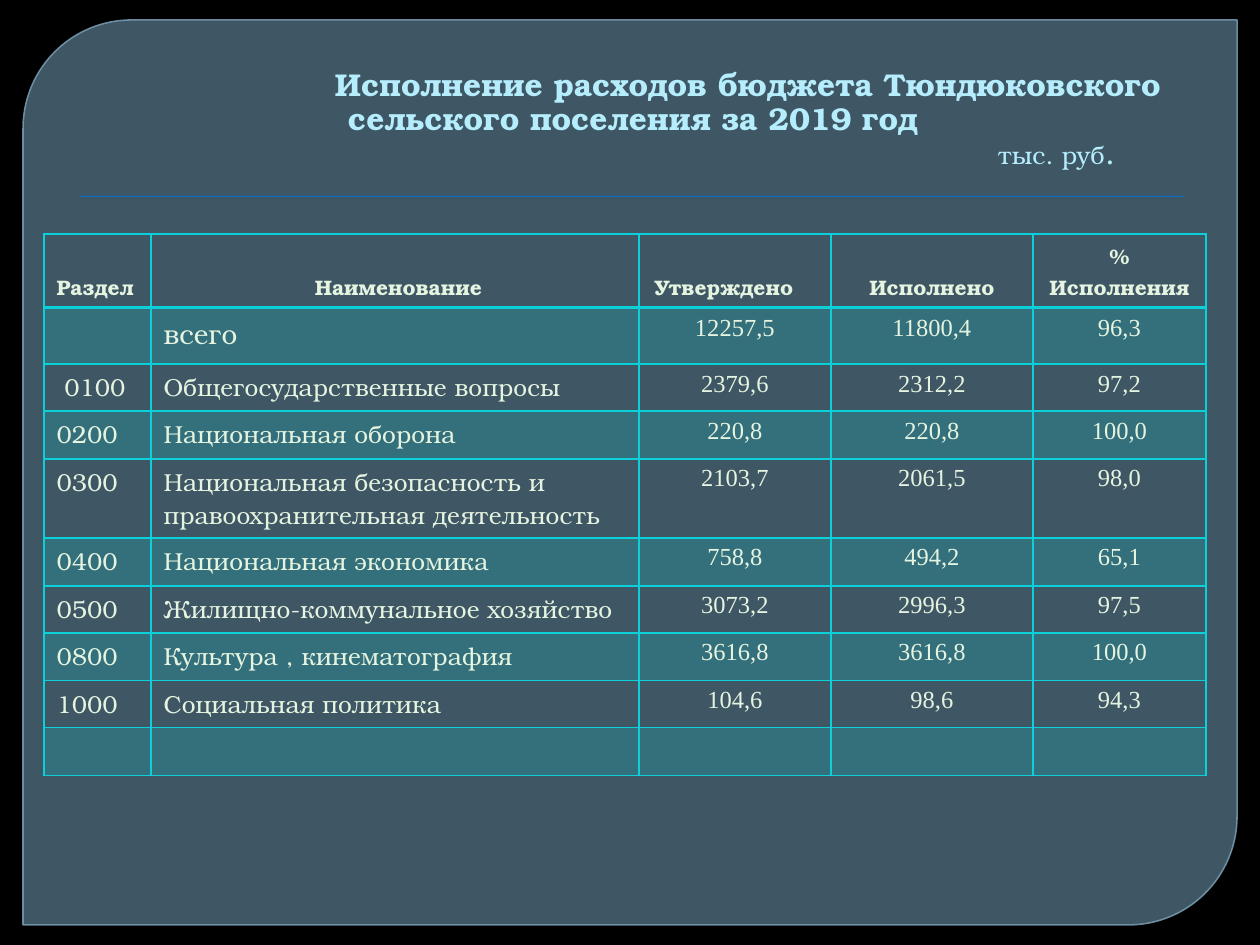
from dataclasses import dataclass

from lxml.etree import SubElement
from pptx import Presentation
from pptx.dml.color import RGBColor
from pptx.enum.shapes import MSO_SHAPE as Preset
from pptx.enum.text import MSO_ANCHOR as Anchor, PP_ALIGN as Align
from pptx.oxml.ns import qn
from pptx.util import Pt

PX = 914400 / 126


@dataclass(frozen=True)
class Theme:
    backdrop: str = "000000"
    card: str = "61869C"
    edge: str = "779BB2"
    rule: str = "0F6FC6"
    title: str = "B5EDFD"
    text: str = "E5F4E0"
    accent: str = "0BD0D9"
    serif: str = "TeX Gyre Bonum"
    digits: str = "Times New Roman"
    title_size: float = 18
    unit_size: float = 14.4
    header_size: float = 12
    total_size: float = 16
    body_size: float = 14


THEME = Theme()
TITLE = "Исполнение расходов бюджета Тюндюковского сельского поселения за 2019 год"
UNIT = "тыс. руб"
HEADER = ("Раздел", " Наименование", "Утверждено", "Исполнено", "% Исполнения")
ROWS = [
    ("", "всего", "12257,5", "11800,4", "96,3"),
    (" 0100", "Общегосударственные вопросы", "2379,6", "2312,2", "97,2"),
    ("0200", "Национальная оборона", "220,8", "220,8", "100,0"),
    ("0300", "Национальная безопасность и правоохранительная деятельность",
     "2103,7", "2061,5", "98,0"),
    ("0400", "Национальная экономика", "758,8", "494,2", "65,1"),
    ("0500", "Жилищно-коммунальное хозяйство", "3073,2", "2996,3", "97,5"),
    ("0800", "Культура , кинематография", "3616,8", "3616,8", "100,0"),
    ("1000", "Социальная политика", "104,6", "98,6", "94,3"),
    ("", "", "", "", ""),
]
COLUMN_WIDTHS = (107, 488, 192, 202, 173)
ROW_HEIGHTS = (74, 56, 47, 48, 79, 48, 47, 48, 47, 48)
APPROVED_COLUMN = 2
APPROVED_SHIFT = 22


def px(*lengths):
    return [round(length * PX) for length in lengths]


def paint(fill, color, opacity=100):
    fill.solid()
    fill.fore_color.rgb = RGBColor.from_string(color)
    if opacity < 100:
        for node in fill._xPr.iter(qn("a:srgbClr")):
            if node.getparent().getparent() is fill._xPr:
                SubElement(node, qn("a:alpha"), val=str(opacity * 1000))


def style(font, size, color, face=THEME.serif, bold=False):
    font.size, font.name, font.bold = Pt(size), face, bold
    font.color.rgb = RGBColor.from_string(color)


def indent(para, left, first=0):
    margin, offset = px(left, first)
    properties = para._p.get_or_add_pPr()
    properties.set("marL", str(margin))
    properties.set("indent", str(offset))


def add_panel(page, preset, bounds, color, opacity=100):
    panel = page.shapes.add_shape(preset, *px(*bounds))
    panel.shadow.inherit = False
    paint(panel.fill, color, opacity)
    panel.line.fill.background()
    return panel


def add_title(page):
    frame = page.shapes.add_textbox(*px(64, 52, 1118, 119)).text_frame
    frame.word_wrap = True
    frame.vertical_anchor = Anchor.BOTTOM
    frame.margin_left = frame.margin_right = frame.margin_top = frame.margin_bottom = 0
    heading, unit = frame.paragraphs[0], frame.add_paragraph()
    heading.text = TITLE
    indent(heading, 284, -13)
    style(heading.font, THEME.title_size, THEME.title, bold=True)
    indent(unit, 934)
    for text, size in ((UNIT, THEME.unit_size), (".", THEME.title_size)):
        span = unit.add_run()
        span.text = text
        style(span.font, size, THEME.title)
    for para in frame.paragraphs:
        para.line_spacing = 0.9


def add_borders(cell, header):
    properties = cell._tc.get_or_add_tcPr()
    for side in "LRTB":
        width = 2 if header and side == "B" else 1
        border = SubElement(properties, qn(f"a:ln{side}"), w=str(Pt(width)))
        solid = SubElement(border, qn("a:solidFill"))
        SubElement(solid, qn("a:srgbClr"), val=THEME.accent)


def fill_cell(cell, text, row, column):
    header, number = row == 0, column >= 2
    cell.text = text
    add_borders(cell, header)
    if row % 2:
        paint(cell.fill, THEME.accent, 20)
    else:
        cell.fill.background()
    cell.vertical_anchor = Anchor.BOTTOM if header else Anchor.TOP
    para = cell.text_frame.paragraphs[0]
    para.alignment = Align.CENTER if number or header and column else Align.LEFT
    if header:
        style(para.font, THEME.header_size, THEME.text, bold=True)
        if column == APPROVED_COLUMN:
            cell.margin_right += px(APPROVED_SHIFT)[0]
    else:
        size = THEME.total_size if text == "всего" else THEME.body_size
        style(para.font, size, THEME.text, THEME.digits if number else THEME.serif)


def add_budget_table(page):
    records = [HEADER, *ROWS]
    bounds = px(44, 234, sum(COLUMN_WIDTHS), sum(ROW_HEIGHTS))
    table = page.shapes.add_table(len(records), len(HEADER), *bounds).table
    table.first_row = table.horz_banding = False
    for column, width in zip(table.columns, px(*COLUMN_WIDTHS)):
        column.width = width
    for line, height in zip(table.rows, px(*ROW_HEIGHTS)):
        line.height = height
    for row, record in enumerate(records):
        for column, text in enumerate(record):
            fill_cell(table.cell(row, column), text, row, column)


def main():
    deck = Presentation()
    deck.slide_width, deck.slide_height = px(1260, 945)
    page = deck.slides.add_slide(deck.slide_layouts[6])
    paint(page.background.fill, THEME.backdrop)
    card = add_panel(page, Preset.ROUND_2_DIAG_RECTANGLE, (23, 20, 1214, 905), THEME.card, 65)
    card.adjustments[0] = 0.12
    paint(card.line.fill, THEME.edge, 88)
    card.line.width = Pt(0.87)
    add_panel(page, Preset.RECTANGLE, (80, 196, 1103, 1), THEME.rule)
    add_title(page)
    add_budget_table(page)
    deck.save("out.pptx")


if __name__ == "__main__":
    main()
